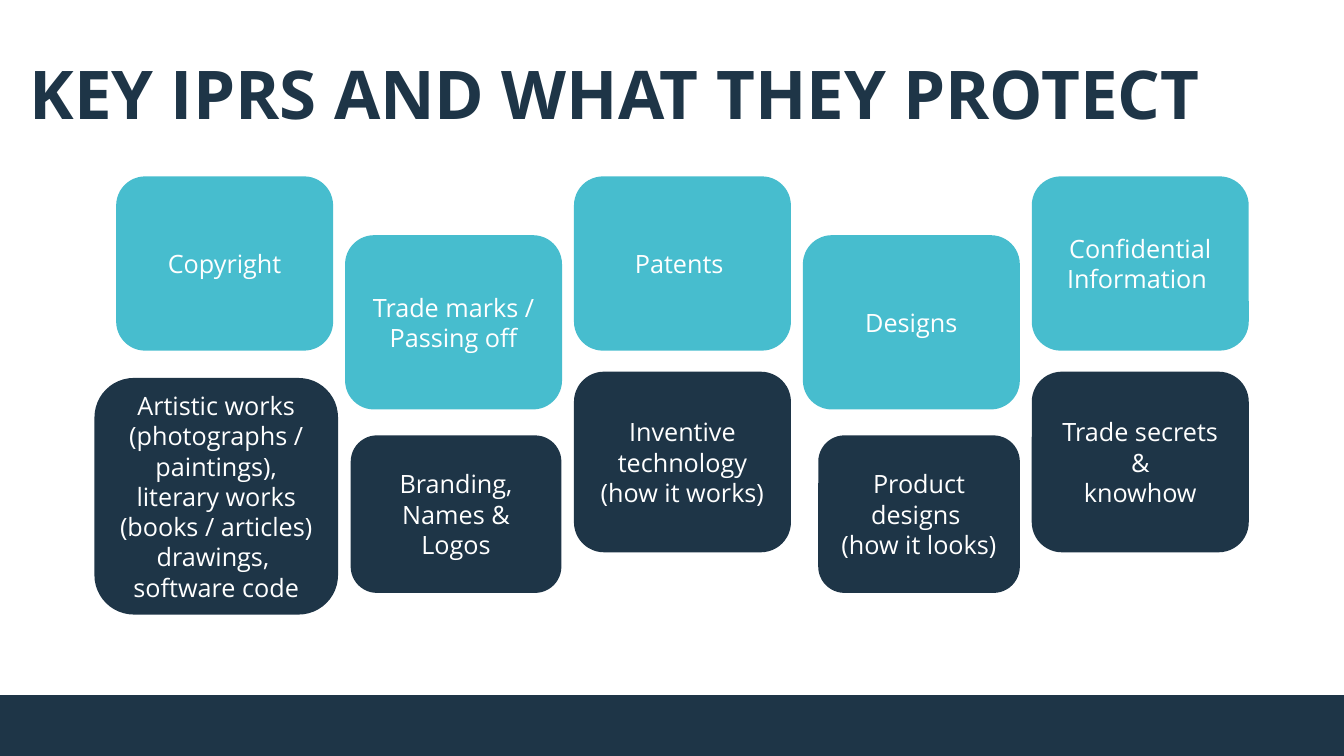
import pptx
import pptx.dml.color
import pptx.enum.shapes
import pptx.enum.text
import pptx.util

EMU_PER_PX = 6350
NAVY = "1E3547"
TEAL = "47BDCE"
WHITE = "FFFFFF"

FIRST_LEFT, COLUMN_STEP = 166, 327
TOPIC_TOPS = (252, 336)
TOPIC_WIDTH, TOPIC_HEIGHT = 310, 249

RIGHTS = [
    ("Copyright",
     "Artistic works (photographs / paintings), literary works "
     "(books / articles) drawings, \nsoftware code",
     (135, 540, 348, 338)),
    ("Trade marks /\nPassing off", "Branding,\nNames &\nLogos", (501, 622, 301, 225)),
    ("Patents ", "Inventive technology (how it works)", (820, 531, 310, 258)),
    ("Designs", "Product designs \n(how it looks)", (1169, 622, 288, 225)),
    ("Confidential Information ", "Trade secrets &\nknowhow", (1474, 531, 310, 258)),
]


def px(length):
    return pptx.util.Emu(length * EMU_PER_PX)


def color(value):
    return pptx.dml.color.RGBColor.from_string(value)


def write(frame, text, size=18, fill=WHITE, bold=False, align="CENTER",
          anchor="MIDDLE", inset=15):
    frame.word_wrap = True
    frame.vertical_anchor = getattr(pptx.enum.text.MSO_ANCHOR, anchor)
    frame.margin_left = frame.margin_right = px(inset)
    frame.text = text
    for paragraph in frame.paragraphs:
        paragraph.alignment = getattr(pptx.enum.text.PP_ALIGN, align)
        paragraph.font.name = "Open Sans"
        paragraph.font.size = pptx.util.Pt(size)
        paragraph.font.bold = bold
        paragraph.font.color.rgb = color(fill)


class Deck:
    def __init__(self, width, height):
        self.presentation = pptx.Presentation()
        self.presentation.slide_width = px(width)
        self.presentation.slide_height = px(height)
        self.slide = self.presentation.slides.add_slide(
            self.presentation.slide_layouts[6])

    def block(self, kind, bounds, fill):
        shape = self.slide.shapes.add_shape(
            getattr(pptx.enum.shapes.MSO_SHAPE, kind), *map(px, bounds))
        shape.shadow.inherit = False
        shape.fill.solid()
        shape.fill.fore_color.rgb = color(fill)
        shape.line.fill.background()
        return shape

    def card(self, text, bounds, fill):
        write(self.block("ROUNDED_RECTANGLE", bounds, fill).text_frame, text)

    def title(self, text, bounds):
        frame = self.slide.shapes.add_textbox(*map(px, bounds)).text_frame
        write(frame, text, size=48, fill=NAVY, bold=True, align="LEFT", anchor="TOP")
        frame.auto_size = pptx.enum.text.MSO_AUTO_SIZE.SHAPE_TO_FIT_TEXT


def main():
    deck = Deck(1920, 1080)
    deck.block("RECTANGLE", (0, 993, 1920, 87), NAVY)
    deck.title("KEY IPRS AND WHAT THEY PROTECT", (27, 68, 1931, 131))
    for column, (topic, protects, protects_bounds) in enumerate(RIGHTS):
        topic_bounds = (FIRST_LEFT + column * COLUMN_STEP, TOPIC_TOPS[column % 2],
                        TOPIC_WIDTH, TOPIC_HEIGHT)
        deck.card(topic, topic_bounds, TEAL)
        deck.card(protects, protects_bounds, NAVY)
    deck.presentation.save("out.pptx")


if __name__ == "__main__":
    main()
